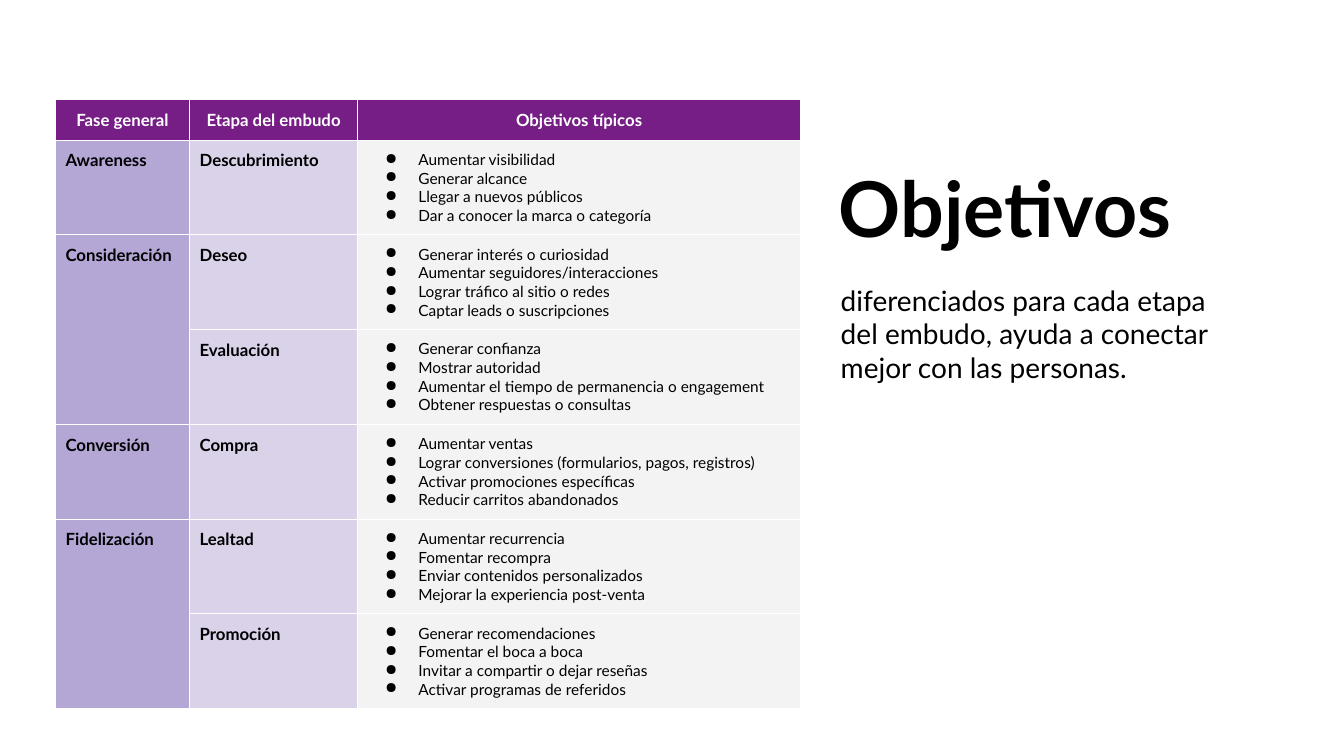
from lxml import etree
from pptx import Presentation
from pptx import util as u
from pptx.dml.color import RGBColor
from pptx.enum import text
from pptx.oxml.ns import qn

COLORS = {"header": "761E86", "phase": "B4A7D6", "stage": "D9D2E9",
          "goals": "F3F3F3", "white": "FFFFFF", "black": "000000"}
HEADERS = ["Fase general", "Etapa del embudo", "Objetivos típicos"]
FUNNEL = [
    ("Awareness", "Descubrimiento",
     ["Aumentar visibilidad", "Generar alcance",
      "Llegar a nuevos públicos", "Dar a conocer la marca o categoría"]),
    ("Consideración", "Deseo",
     ["Generar interés o curiosidad", "Aumentar seguidores/interacciones",
      "Lograr tráfico al sitio o redes", "Captar leads o suscripciones"]),
    ("", "Evaluación",
     ["Generar confianza", "Mostrar autoridad",
      "Aumentar el tiempo de permanencia o engagement",
      "Obtener respuestas o consultas"]),
    ("Conversión", "Compra",
     ["Aumentar ventas", "Lograr conversiones (formularios, pagos, registros)",
      "Activar promociones específicas", "Reducir carritos abandonados"]),
    ("Fidelización", "Lealtad",
     ["Aumentar recurrencia", "Fomentar recompra",
      "Enviar contenidos personalizados", "Mejorar la experiencia post-venta"]),
    ("", "Promoción",
     ["Generar recomendaciones", "Fomentar el boca a boca",
      "Invitar a compartir o dejar reseñas", "Activar programas de referidos"]),
]


def write(tf, lines, size, bold, color="black", align=text.PP_ALIGN.LEFT, bullets=False):
    tf.word_wrap = True
    for i, line in enumerate(lines):
        p = tf.paragraphs[0] if i == 0 else tf.add_paragraph()
        p.alignment = align
        if bullets:
            pPr = p._p.get_or_add_pPr()
            pPr.set("marL", str(u.Inches(0.5)))
            pPr.set("indent", str(u.Inches(-0.33)))
            bullet_color = etree.SubElement(pPr, qn("a:buClr"))
            etree.SubElement(bullet_color, qn("a:srgbClr"), val=COLORS["black"])
            etree.SubElement(pPr, qn("a:buChar"), char="●")
        r = p.add_run()
        r.text = line
        for name, value in {"name": "Lato", "size": u.Pt(size), "bold": bold}.items():
            setattr(r.font, name, value)
        r.font.color.rgb = RGBColor.from_string(COLORS[color])


def style_cell(cell, fill):
    for side in ("left", "right", "top", "bottom"):
        setattr(cell, f"margin_{side}", u.Inches(0.1))
    tcPr = cell._tc.get_or_add_tcPr()
    for edge in ("lnL", "lnR", "lnT", "lnB"):
        line = etree.SubElement(tcPr, qn(f"a:{edge}"), w=str(u.Pt(0.75)))
        solid = etree.SubElement(line, qn("a:solidFill"))
        etree.SubElement(solid, qn("a:srgbClr"), val=COLORS["white"])
    cell.fill.solid()
    cell.fill.fore_color.rgb = RGBColor.from_string(COLORS[fill])


prs = Presentation()
prs.slide_width, prs.slide_height = u.Inches(13.33), u.Inches(7.5)
s = prs.slides.add_slide(prs.slide_layouts[5])

widths = [1.33, 1.67, 4.39]
heights = [0.4] + [0.94] * len(FUNNEL)
table = s.shapes.add_table(len(heights), len(widths), u.Inches(0.55), u.Inches(0.99),
                           u.Inches(sum(widths)), u.Inches(sum(heights))).table
for column, width in zip(table.columns, widths):
    column.width = u.Inches(width)
for row, height in zip(table.rows, heights):
    row.height = u.Inches(height)

for col, header in enumerate(HEADERS):
    cell = table.cell(0, col)
    style_cell(cell, "header")
    write(cell.text_frame, [header], 12, True, "white", text.PP_ALIGN.CENTER)

for row, (phase, stage, goals) in enumerate(FUNNEL, 1):
    for col, fill in enumerate(("phase", "stage", "goals")):
        style_cell(table.cell(row, col), fill)
    if phase:
        write(table.cell(row, 0).text_frame, [phase], 12, True)
    else:
        table.cell(row - 1, 0).merge(table.cell(row, 0))
    write(table.cell(row, 1).text_frame, [stage], 12, True)
    write(table.cell(row, 2).text_frame, goals, 11, False, bullets=True)

title = s.shapes.title
message = s.shapes.add_textbox(0, 0, 0, 0)
for sp, box, content, size, bold in [
    (title, (8.22, 1.49, 4.85, 1.13), "Objetivos", 55, True),
    (message, (8.24, 2.71, 4.25, 1.21),
     "diferenciados para cada etapa del embudo, ayuda a conectar mejor con las personas.",
     20, False),
]:
    sp.left, sp.top, sp.width, sp.height = map(u.Inches, box)
    tf = sp.text_frame
    for side in ("left", "right", "top", "bottom"):
        setattr(tf, f"margin_{side}", u.Inches(0.1))
    tf.vertical_anchor = text.MSO_ANCHOR.TOP
    tf.auto_size = text.MSO_AUTO_SIZE.SHAPE_TO_FIT_TEXT
    write(tf, [content], size, bold)

prs.save("out.pptx")
